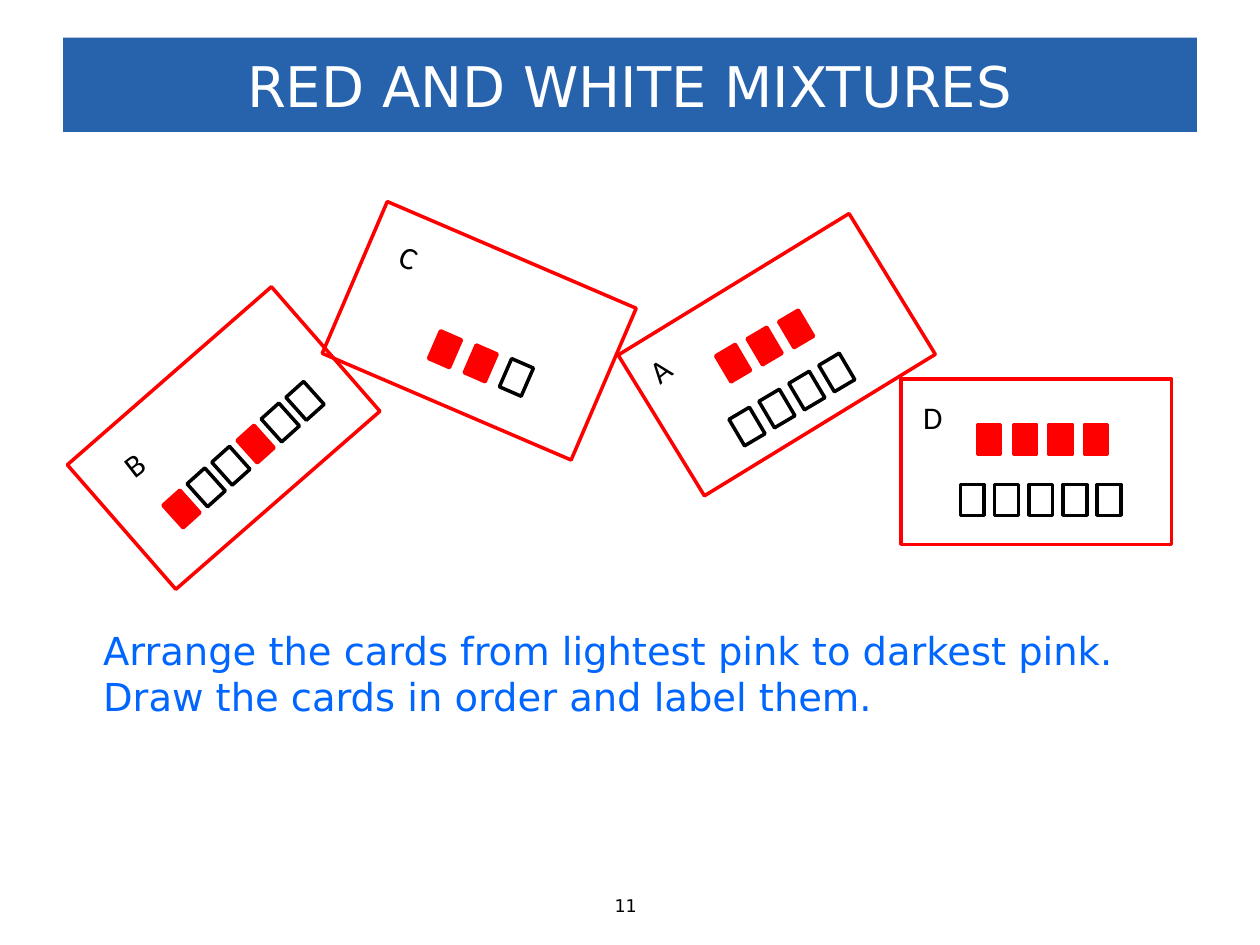
from pptx import Presentation
from pptx.dml.color import RGBColor
from pptx.enum.shapes import MSO_SHAPE as Shape
from pptx.enum.text import MSO_ANCHOR as Anchor, MSO_AUTO_SIZE as AutoSize, PP_ALIGN as Align
from pptx.util import Cm, Pt

COLOURS = {"banner": "2762AD", "white": "FFFFFF", "black": "000000",
           "red": "FF0000", "blue": "0066FF"}
TITLE = "RED AND WHITE MIXTURES"
TASK = ["Arrange the cards from lightest pink to darkest pink.",
        "Draw the cards in order and label them."]
PAGE_NUMBER = "11"

CARD_SIZE = (5.46, 3.33)
LETTER_SIZE = (1, 1.02)
TILE_SIZES = {"R": (0.46, 0.61), "W": (0.48, 0.62)}

CARDS = [
    {"letter": "B", "centre": (4.51, 8.83), "turn": 318.9,
     "letter_centre": (2.76, 9.32), "letter_turn": 322.3, "tile_turn": 318.1,
     "rows": [("RWWRWW", (3.66, 10.26), (6.15, 8.08))]},
    {"letter": "C", "centre": (9.66, 6.67), "turn": 23.2,
     "letter_centre": (8.32, 5.21), "letter_turn": 21.5, "tile_turn": 23.5,
     "rows": [("RRW", (8.97, 7.04), (10.41, 7.61))]},
    {"letter": "A", "centre": (15.66, 7.15), "turn": 328.5,
     "letter_centre": (13.35, 7.42), "letter_turn": 321.9, "tile_turn": 329.4,
     "rows": [("RRR", (14.78, 7.32), (16.05, 6.63)),
              ("WWWW", (15.06, 8.6), (16.87, 7.51))]},
    {"letter": "D", "centre": (20.89, 9.31), "turn": 0,
     "letter_centre": (18.86, 8.41), "letter_turn": 0, "tile_turn": 0,
     "rows": [("RRRR", (19.94, 8.86), (22.1, 8.86)),
              ("WWWWW", (19.6, 10.08), (22.36, 10.08))]},
]


def colour(name):
    return RGBColor.from_string(COLOURS[name])


def frame(centre, size):
    (x, y), (width, height) = centre, size
    return Cm(x - width / 2), Cm(y - height / 2), Cm(width), Cm(height)


def write(holder, lines, size, ink, font="DejaVu Sans", align=Align.LEFT,
          anchor=Anchor.TOP, wrap=True):
    text = holder.text_frame
    text.word_wrap = wrap
    text.auto_size = AutoSize.NONE
    text.vertical_anchor = anchor
    for index, line in enumerate(lines):
        para = text.add_paragraph() if index else text.paragraphs[0]
        para.alignment = align
        span = para.add_run()
        span.text = line
        span.font.name = font
        span.font.size = Pt(size)
        span.font.color.rgb = colour(ink)


def draw_rectangle(page, centre, size, turn, line, fill=None):
    box = page.shapes.add_shape(Shape.RECTANGLE, *frame(centre, size))
    box.shadow.inherit = False
    box.rotation = turn
    box.line.color.rgb = colour(line)
    box.line.width = Pt(2)
    if fill:
        box.fill.solid()
        box.fill.fore_color.rgb = colour(fill)
    else:
        box.fill.background()


def draw_row(page, pattern, first, last, turn):
    for index, kind in enumerate(pattern):
        share = index / (len(pattern) - 1)
        centre = [a + (b - a) * share for a, b in zip(first, last)]
        ink, fill = ("red", "red") if kind == "R" else ("black", None)
        draw_rectangle(page, centre, TILE_SIZES[kind], turn, ink, fill)


def draw_card(page, card):
    draw_rectangle(page, card["centre"], CARD_SIZE, card["turn"], "red")
    label = page.shapes.add_textbox(*frame(card["letter_centre"], LETTER_SIZE))
    label.rotation = card["letter_turn"]
    write(label, [card["letter"]], 18, "black", font="Calibri")
    for pattern, first, last in card["rows"]:
        draw_row(page, pattern, first, last, card["tile_turn"])


def main():
    deck = Presentation()
    deck.slide_width, deck.slide_height = Cm(25.4), Cm(19.05)
    page = deck.slides.add_slide(deck.slide_layouts[5])

    title = page.shapes.title
    title.left, title.top, title.width, title.height = Cm(1.27), Cm(0.76), Cm(22.86), Cm(1.9)
    title.fill.solid()
    title.fill.fore_color.rgb = colour("banner")
    write(title, [TITLE], 32, "white", align=Align.CENTER, anchor=Anchor.MIDDLE)

    task = page.shapes.add_textbox(Cm(1.83), Cm(12.52), Cm(22.86), Cm(2.13))
    write(task, TASK, 22, "blue")

    for card in CARDS:
        draw_card(page, card)

    number = page.shapes.add_textbox(Cm(12.14), Cm(17.91), Cm(1.12), Cm(0.69))
    write(number, [PAGE_NUMBER], 10, "black", wrap=False)

    deck.save("out.pptx")


if __name__ == "__main__":
    main()
